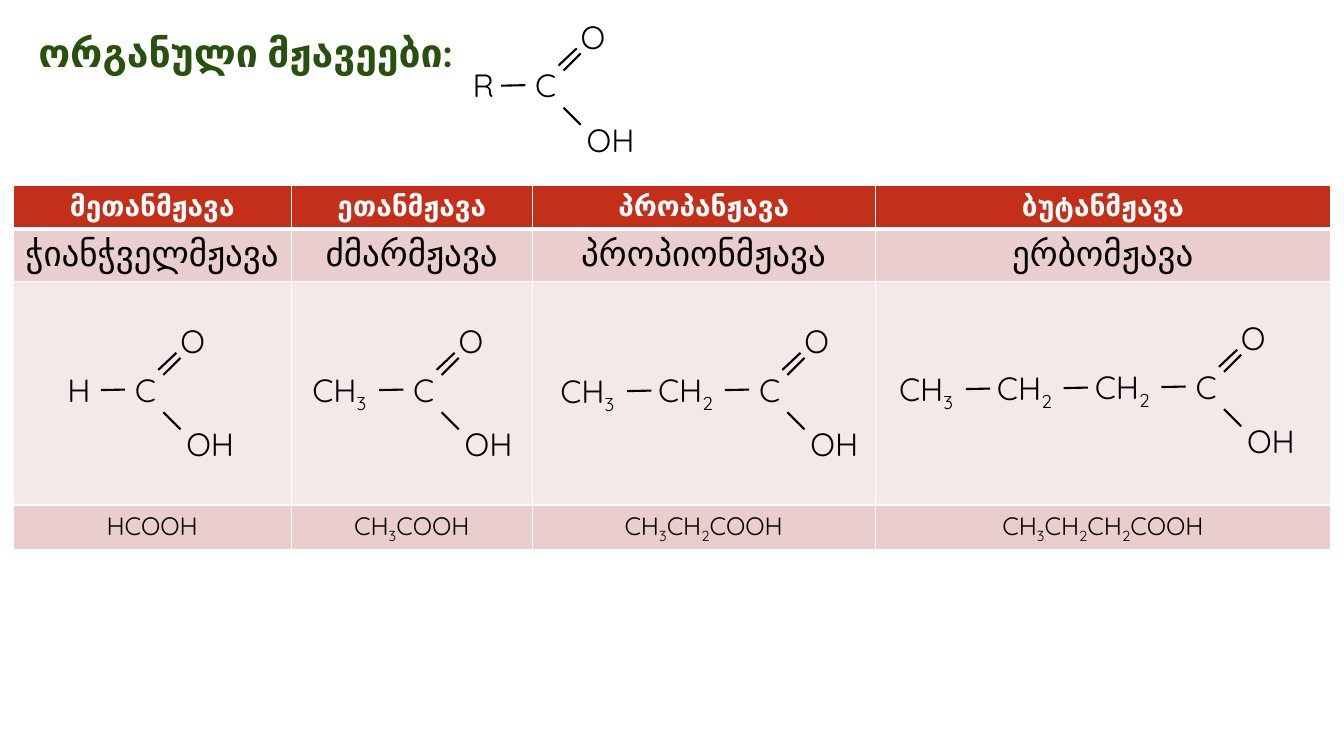
"""Build a slide on organic acids: a general formula and a table of four acids."""
from dataclasses import dataclass
from itertools import groupby

from lxml.etree import SubElement as Sub
from pptx import Presentation
from pptx.dml.color import RGBColor as Rgb
from pptx.enum.shapes import MSO_CONNECTOR as Link
from pptx.enum.text import MSO_ANCHOR as Anchor, MSO_AUTO_SIZE as Auto, PP_ALIGN as Align
from pptx.oxml.ns import qn
from pptx.util import Inches, Pt


@dataclass(frozen=True)
class Theme:
    green: str = "2A5010"
    red: str = "C42F1A"
    rose: str = "EACDCD"
    blush: str = "F5E8E8"
    white: str = "FFFFFF"
    black: str = "000000"
    title: int = 28
    name: int = 20
    trivial: int = 25
    atom: int = 23
    brief: int = 18
    line: float = 1.5


def grid(*cells):
    """Turn counts of grid cells, each 0.01 inch, into lengths."""
    return [Inches(n / 100) for n in cells]


def write(par, text, size, face, color, bold=False):
    """Add the text run by run, with its digits as subscripts."""
    for digit, part in groupby(text, str.isdigit):
        run = par.add_run()
        run.text = "".join(part)
        font = run.font
        font.size, font.name, font.bold = Pt(size), face, bold
        font.color.rgb = Rgb.from_string(color)
        if digit:
            run._r.get_or_add_rPr().set("baseline", "-25000")


theme = Theme()
deck = Presentation()
deck.slide_width, deck.slide_height = grid(1333, 750)
slide = deck.slides.add_slide(deck.slide_layouts[5])

title = slide.shapes.title
title.left, title.top, title.width, title.height = grid(28, 20, 1042, 61)
frame = title.text_frame
frame.word_wrap, frame.auto_size = True, Auto.SHAPE_TO_FIT_TEXT
frame.vertical_anchor = Anchor.TOP
par = frame.paragraphs[0]
par.alignment, par.line_spacing, par.space_after = Align.LEFT, 1.07, Pt(8)
write(par, "ორგანული მჟავეები:", theme.title, "Lato", theme.green, True)

left, top = 13, 184
cols = [276, 239, 340, 452]
rows = [
    (41, theme.red, theme.name, "Karla", theme.white, True,
     ["მეთანმჟავა", "ეთანმჟავა", "პროპანჟავა", "ბუტანმჟავა"]),
    (41, theme.rose, theme.trivial, "Karla", theme.black, False,
     ["ჭიანჭველმჟავა", "ძმარმჟავა", "პროპიონმჟავა", "ერბომჟავა"]),
    (222, theme.blush, theme.brief, "Quicksand", theme.black, False, [""] * 4),
    (41, theme.rose, theme.brief, "Quicksand", theme.black, False,
     ["HCOOH", "CH3COOH", "CH3CH2COOH", "CH3CH2CH2COOH"]),
]
high = sum(row[0] for row in rows)
table = slide.shapes.add_table(len(rows), len(cols), *grid(left, top, sum(cols), high)).table
for col, wide in zip(table.columns, grid(*cols)):
    col.width = wide
for r, (tall, fill, size, face, color, bold, words) in enumerate(rows):
    table.rows[r].height = grid(tall)[0]
    for c, word in enumerate(words):
        cell = table.cell(r, c)
        props = cell._tc.get_or_add_tcPr()
        for side in "LRTB":
            thick = 3 if (r, side) in [(0, "B"), (1, "T")] else 1
            edge = Sub(props, qn(f"a:ln{side}"), w=str(Pt(thick)))
            Sub(Sub(edge, qn("a:solidFill")), qn("a:srgbClr"), val=theme.white)
        cell.fill.solid()
        cell.fill.fore_color.rgb = Rgb.from_string(fill)
        par = cell.text_frame.paragraphs[0]
        par.alignment = Align.CENTER
        write(par, word, size, face, color, bold)

step = 97
acids = [
    (521, 60, [("R", 62, 70)]),
    (left + 111, 362, [("H", 67, 90)]),
    (left + sum(cols[:1]) + 111, 362, [("CH3", 100, 90)]),
    (left + sum(cols[:2]) + 215, 362, [("CH2", 100, 90), ("CH3", 100 + step, 90)]),
    (left + sum(cols[:3]) + 308, 359,
     [("CH2", 100, 90), ("CH2", 100 + step, 90), ("CH3", 100 + 2 * step, 90)]),
]
for x, y, chain in acids:
    group = slide.shapes.add_group_shape().shapes
    atoms = [("C", 0, 0, 46, False), ("OH", 51, 54, 70, True), ("O", 45, -48, 48, False)]
    atoms += [(word, -back, i, wide, True) for i, (word, back, wide) in enumerate(chain)]
    boxes = []
    for word, dx, dy, wide, wrap in atoms:
        box = group.add_textbox(*grid(x + dx, y + dy, wide, 49))
        frame = box.text_frame
        frame.word_wrap, frame.auto_size = wrap, Auto.SHAPE_TO_FIT_TEXT
        write(frame.paragraphs[0], word, theme.atom, "Quicksand", theme.black)
        boxes.append(box)
    bonds = [(-step * i, 24.5 + i, -step * i - 24, 25 + i) for i in range(len(chain))]
    bonds += [(38, 47, 55, 64), (38, 10, 55, -7), (33, 5, 51, -12)]
    for i, (ax, ay, bx, by) in enumerate(bonds):
        bond = group.add_connector(Link.STRAIGHT, *grid(x + ax, y + ay, x + bx, y + by))
        bond.line.width = Pt(theme.line)
        bond.line.color.rgb = Rgb.from_string(theme.black)
        Sub(bond._element.spPr, qn("a:effectLst"))
        if i == 0:
            bond.begin_connect(boxes[0], 1)

deck.save("out.pptx")
